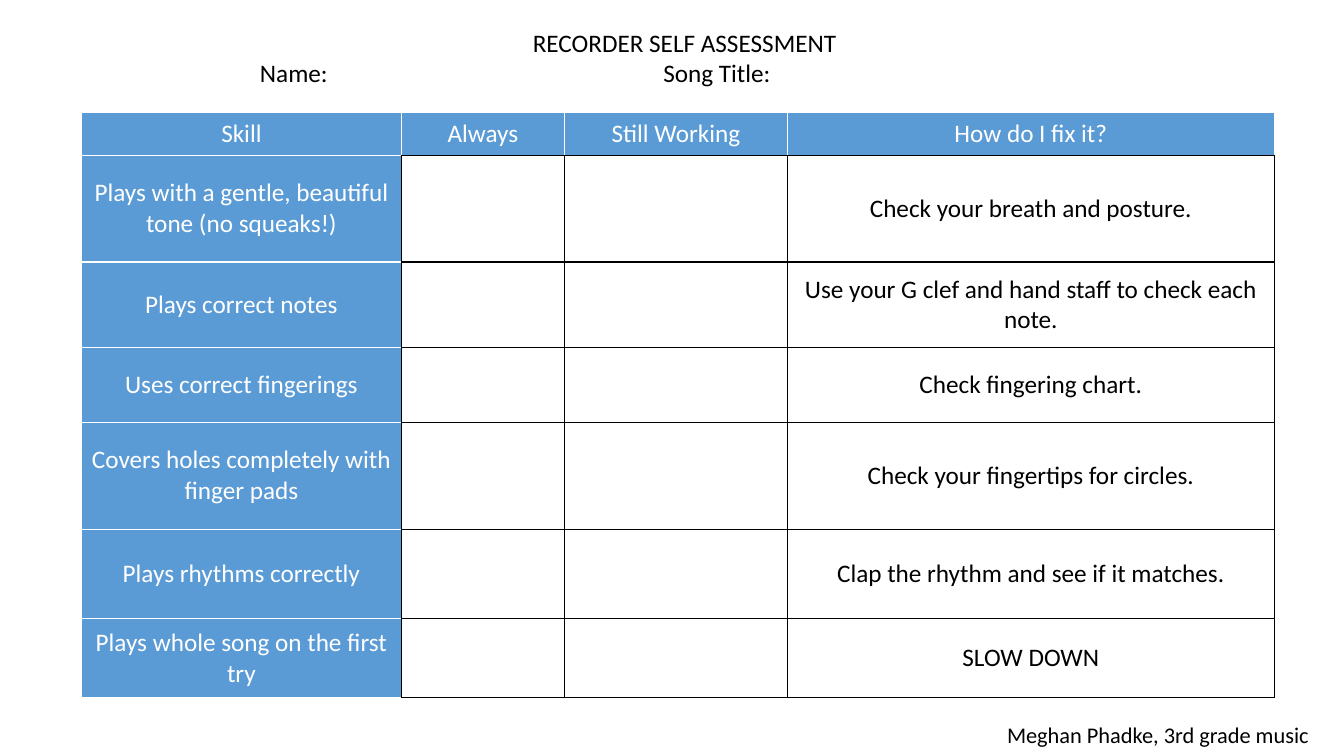
from pptx import Presentation
from pptx.dml.color import RGBColor
from pptx.enum.text import MSO_ANCHOR, PP_ALIGN
from pptx.oxml.ns import qn
from pptx.util import Inches, Pt
from lxml.etree import SubElement

FONT = "Calibri"
BLACK, WHITE, BLUE = "000000", "FFFFFF", "5B9BD5"
TITLE = "RECORDER SELF ASSESSMENT"
FIELDS = "Name:\tSong Title:"
CREDIT = "Meghan Phadke, 3rd grade music"
HEADERS = ["Skill", "Always", "Still Working", "How do I fix it?"]
SKILLS = [
    ("Plays with a gentle, beautiful tone (no squeaks!)", "Check your breath and posture."),
    ("Plays correct notes", "Use your G clef and hand staff to check each note."),
    ("Uses correct fingerings", "Check fingering chart."),
    ("Covers holes completely with finger pads", "Check your fingertips for circles."),
    ("Plays rhythms correctly", "Clap the rhythm and see if it matches."),
    ("Plays whole song on the first try", "SLOW DOWN"),
]
COL_WIDTHS = [3.17, 1.62, 2.21, 4.83]
ROW_HEIGHTS = [0.42, 1.06, 0.85, 0.74, 1.06, 0.89, 0.78]


def color(value):
    return RGBColor.from_string(value)


def style(p, size, ink, align=PP_ALIGN.LEFT):
    p.alignment = align
    for r in p.runs:
        r.font.name = FONT
        r.font.size = Pt(size)
        r.font.color.rgb = color(ink)


def add_text(s, text, left, top, width, height):
    tf = s.shapes.add_textbox(Inches(left), Inches(top), Inches(width), Inches(height)).text_frame
    tf.word_wrap = True
    tf.text = text
    return tf


def set_borders(cell, edges):
    tcPr = cell._tc.get_or_add_tcPr()
    for side, ink in zip("LRTB", edges):
        ln = SubElement(tcPr, qn(f"a:ln{side}"), w=str(Pt(1)))
        fill = SubElement(ln, qn("a:solidFill"))
        SubElement(fill, qn("a:srgbClr"), val=ink)


def fill_cell(cell, text, row, col):
    is_heading = row == 0 or col == 0
    if is_heading:
        right = BLACK if row else WHITE
        bottom = BLACK if col else WHITE
        set_borders(cell, (WHITE, right, WHITE, bottom))
        cell.fill.solid()
        cell.fill.fore_color.rgb = color(BLUE)
    else:
        set_borders(cell, [BLACK] * 4)
        cell.fill.background()
    cell.margin_left = cell.margin_right = Inches(0.07)
    cell.margin_top = cell.margin_bottom = 0
    cell.vertical_anchor = MSO_ANCHOR.MIDDLE
    cell.text_frame.text = text
    style(cell.text_frame.paragraphs[0], 18, WHITE if is_heading else BLACK, PP_ALIGN.CENTER)


def add_skill_table(s):
    rows = [HEADERS] + [[skill, "", "", fix] for skill, fix in SKILLS]
    table = s.shapes.add_table(
        len(rows), len(HEADERS), Inches(0.81), Inches(1.12),
        Inches(sum(COL_WIDTHS)), Inches(sum(ROW_HEIGHTS))).table
    for column, width in zip(table.columns, COL_WIDTHS):
        column.width = Inches(width)
    for row, height in zip(table.rows, ROW_HEIGHTS):
        row.height = Inches(height)
    for i, texts in enumerate(rows):
        for j, text in enumerate(texts):
            fill_cell(table.cell(i, j), text, i, j)


def main():
    prs = Presentation()
    prs.slide_width, prs.slide_height = Inches(13.33), Inches(7.5)
    s = prs.slides.add_slide(prs.slide_layouts[6])

    tf = add_text(s, TITLE, 2.48, 0.22, 8.62, 0.71)
    style(tf.paragraphs[0], 18, BLACK, PP_ALIGN.CENTER)
    p = tf.add_paragraph()
    p.text = FIELDS
    tabs = SubElement(p._p.get_or_add_pPr(), qn("a:tabLst"))
    SubElement(tabs, qn("a:tab"), pos=str(Inches(4)), algn="l")
    style(p, 18, BLACK)

    add_skill_table(s)

    tf = add_text(s, CREDIT, 9.89, 7.11, 3.77, 0.37)
    style(tf.paragraphs[0], 16, BLACK)
    prs.save("out.pptx")


if __name__ == "__main__":
    main()
